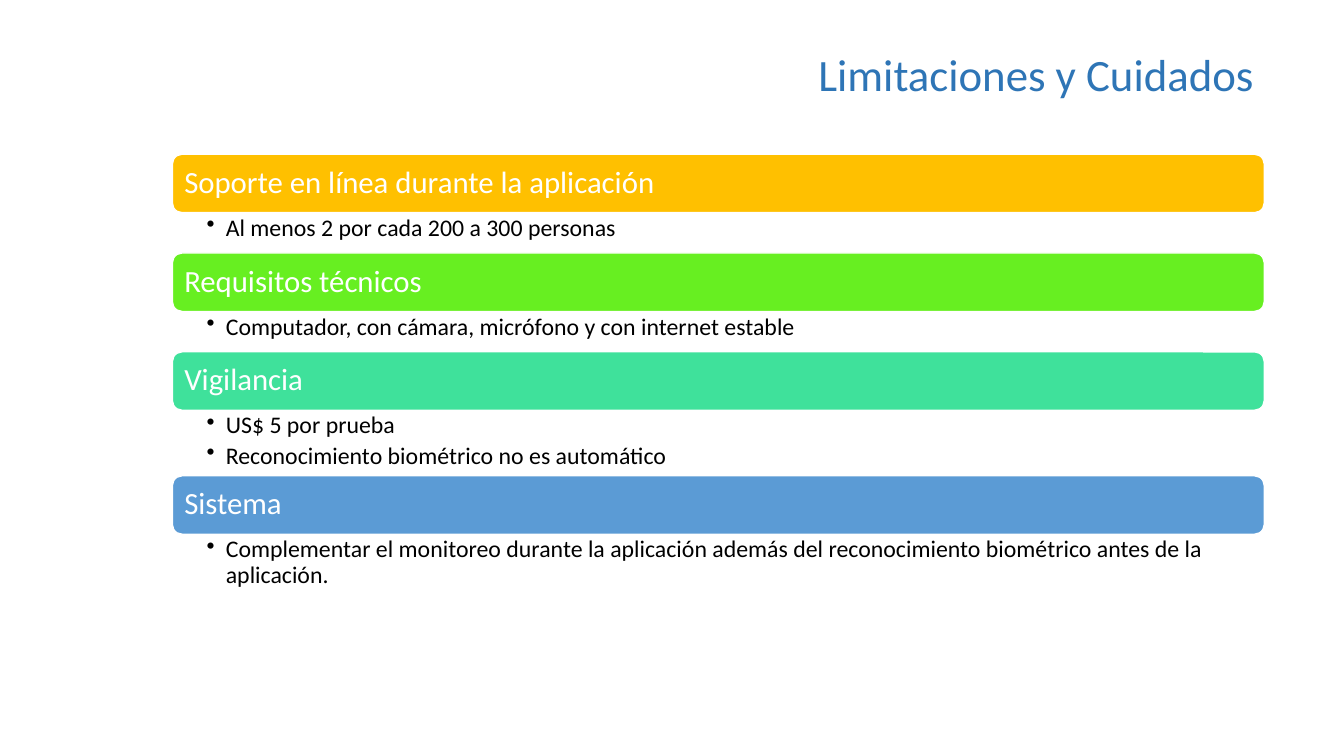
"""Build the slide on limits and precautions of online testing."""
from dataclasses import dataclass

from lxml import etree
from pptx import Presentation
from pptx.dml.color import RGBColor
from pptx.enum.shapes import MSO_SHAPE
from pptx.enum.text import MSO_ANCHOR, PP_ALIGN
from pptx.oxml.ns import qn
from pptx.util import Inches, Pt

ROUNDED = MSO_SHAPE.ROUNDED_RECTANGLE
MIDDLE, TOP = MSO_ANCHOR.MIDDLE, MSO_ANCHOR.TOP
LEFT, RIGHT = PP_ALIGN.LEFT, PP_ALIGN.RIGHT


@dataclass(frozen=True)
class Theme:
    font: str = "Calibri"
    title: str = "2E75B6"
    white: str = "FFFFFF"
    black: str = "000000"
    amber: str = "FFC000"
    green: str = "67EF21"
    mint: str = "3FE19B"
    blue: str = "5B9BD5"
    title_size: int = 32
    heading_size: int = 22
    detail_size: int = 17


THEME = Theme()
MARGIN, WIDTH = 1.71, 10.83
FIRST_TOP, BAR_HEIGHT = 1.53, 0.58


def set_frame(frame, anchor, left, top, right, bottom):
    settings = {
        "word_wrap": True,
        "vertical_anchor": anchor,
        "margin_left": Inches(left),
        "margin_top": Inches(top),
        "margin_right": Inches(right),
        "margin_bottom": Inches(bottom),
    }
    for name, value in settings.items():
        setattr(frame, name, value)


def write_para(para, text, size, color, align=LEFT, after=0, bullet=False):
    if bullet:
        props = para._p.get_or_add_pPr()
        props.set("marL", str(Inches(0.19)))
        props.set("indent", str(Inches(-0.19)))
        etree.SubElement(props, qn("a:buChar")).set("char", "•")
    spacing = {
        "alignment": align,
        "line_spacing": 0.9,
        "space_before": Pt(0),
        "space_after": Pt(after),
    }
    for name, value in spacing.items():
        setattr(para, name, value)
    span = para.add_run()
    span.text = text
    for name, value in {"name": THEME.font, "size": Pt(size)}.items():
        setattr(span.font, name, value)
    span.font.color.rgb = RGBColor.from_string(color)


deck = Presentation()
deck.slide_width, deck.slide_height = Inches(13.33), Inches(7.5)
page = deck.slides.add_slide(deck.slide_layouts[5])

title = page.shapes.title
title.left, title.top = Inches(MARGIN), Inches(0.44)
title.width, title.height = Inches(WIDTH), Inches(0.65)
set_frame(title.text_frame, MIDDLE, 0.1, 0.05, 0.1, 0.05)
write_para(title.text_frame.paragraphs[0], "Limitaciones y Cuidados",
           THEME.title_size, THEME.title, align=RIGHT)

sections = [
    ("Soporte en línea durante la aplicación", THEME.amber, 0.4,
     ["Al menos 2 por cada 200 a 300 personas"]),
    ("Requisitos técnicos", THEME.green, 0.4,
     ["Computador, con cámara, micrófono y con internet estable"]),
    ("Vigilancia", THEME.mint, 0.65,
     ["US$ 5 por prueba", "Reconocimiento biométrico no es automático"]),
    ("Sistema", THEME.blue, 0.59,
     ["Complementar el monitoreo durante la aplicación además del "
      "reconocimiento biométrico antes de la aplicación."]),
]

top = FIRST_TOP
for heading, color, detail_height, details in sections:
    bar = page.shapes.add_shape(ROUNDED, Inches(MARGIN), Inches(top),
                                Inches(WIDTH), Inches(BAR_HEIGHT))
    bar.shadow.inherit = False
    bar.fill.solid()
    bar.fill.fore_color.rgb = RGBColor.from_string(color)
    bar.line.color.rgb = RGBColor.from_string(THEME.white)
    bar.line.width = Pt(1)
    set_frame(bar.text_frame, MIDDLE, 0.09, 0.09, 0.09, 0.09)
    write_para(bar.text_frame.paragraphs[0], heading,
               THEME.heading_size, THEME.white)
    top += BAR_HEIGHT

    box = page.shapes.add_textbox(Inches(MARGIN), Inches(top),
                                  Inches(WIDTH), Inches(detail_height))
    frame = box.text_frame
    set_frame(frame, TOP, 0.34, 0.03, 0.17, 0.03)
    for index, detail in enumerate(details):
        para = frame.add_paragraph() if index else frame.paragraphs[0]
        write_para(para, detail, THEME.detail_size, THEME.black,
                   after=3.4, bullet=True)
    top += detail_height

deck.save("out.pptx")
